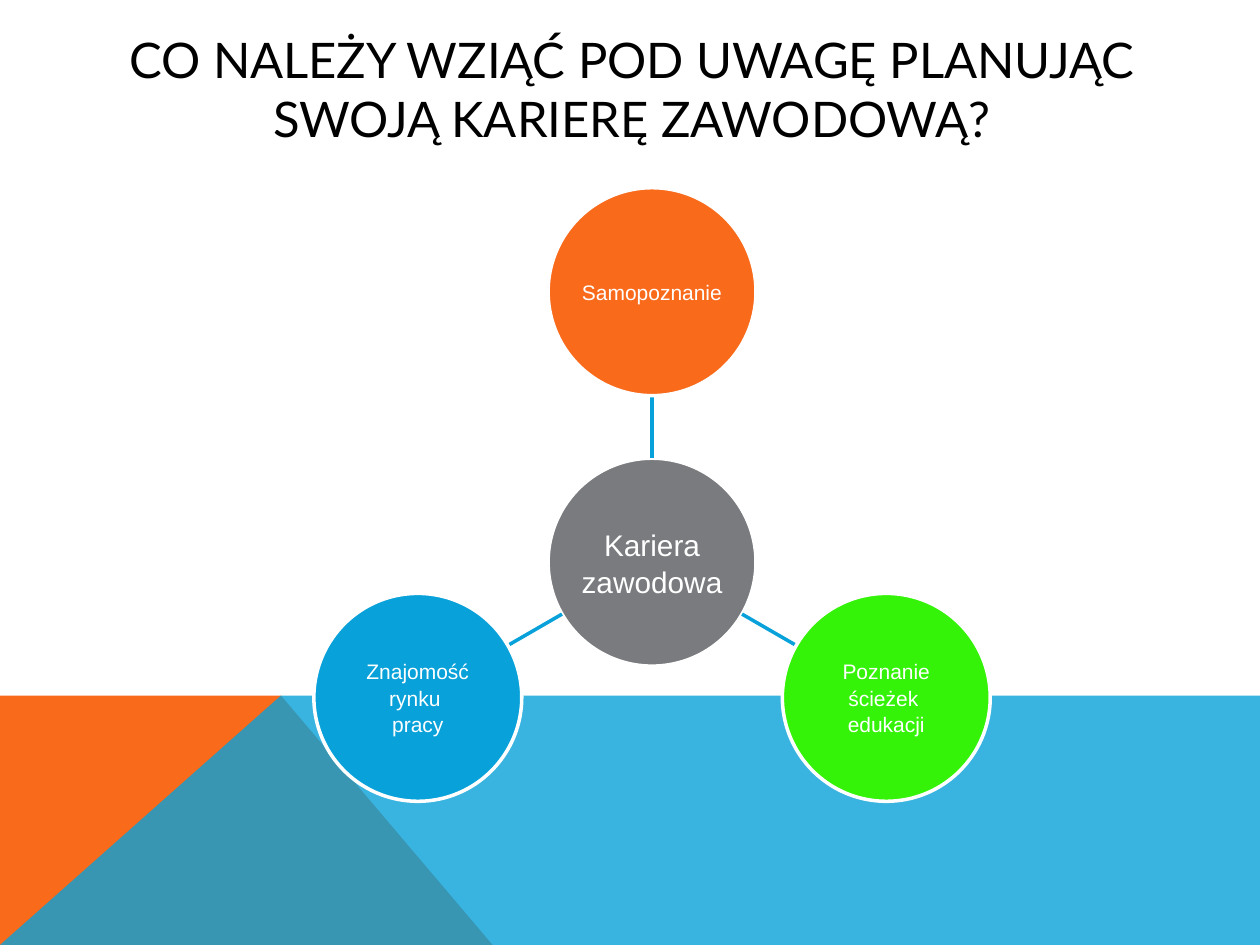
from dataclasses import dataclass
from math import cos, radians, sin

from lxml import etree
from pptx import Presentation
from pptx.dml.color import RGBColor
from pptx.enum.shapes import MSO_CONNECTOR, MSO_SHAPE
from pptx.enum.text import MSO_ANCHOR, MSO_AUTO_SIZE, PP_ALIGN
from pptx.oxml.ns import qn
from pptx.util import Inches, Pt

OVAL = MSO_SHAPE.OVAL
STRAIGHT = MSO_CONNECTOR.STRAIGHT
MIDDLE = MSO_ANCHOR.MIDDLE
CENTER = PP_ALIGN.CENTER
FIXED = MSO_AUTO_SIZE.NONE


@dataclass(frozen=True)
class Theme:
    """Colours, fonts and type sizes of the slide."""
    white: str = "FFFFFF"
    black: str = "000000"
    orange: str = "F96A1B"
    blue: str = "08A1D9"
    green: str = "34F308"
    gray: str = "797B7E"
    head: str = "Lato"
    body: str = "Arial"
    title: int = 28
    hub: int = 17
    node: int = 12
    line: int = 2
    alpha: int = 80


THEME = Theme()
NODES = [
    (270, ["Samopoznanie"], THEME.orange),
    (30, ["Poznanie ścieżek ", "edukacji"], THEME.green),
    (150, ["Znajomość rynku ", "pracy"], THEME.blue),
]


def write(frame, lines, font, size, color):
    """Write centred lines as runs parted by line breaks."""
    frame.word_wrap = True
    frame.auto_size = FIXED
    frame.vertical_anchor = MIDDLE
    para = frame.paragraphs[0]
    para.alignment = CENTER
    for i, line in enumerate(lines):
        if i:
            para.add_line_break()
        run = para.add_run()
        run.text = line
        run.font.name = font
        run.font.size = Pt(size)
        run.font.color.rgb = RGBColor.from_string(color)
    return para


def add_area(slide, points, color, alpha=100):
    """Fill a polygon given by its corners, in inches."""
    start, *rest = [(Inches(x), Inches(y)) for x, y in points]
    form = slide.shapes.build_freeform(*start)
    form.add_line_segments(rest, close=True)
    area = form.convert_to_shape()
    area.shadow.inherit = False
    area.fill.solid()
    area.fill.fore_color.rgb = RGBColor.from_string(color)
    area.line.fill.background()
    if alpha < 100:
        tint = area.fill._xPr.find(".//" + qn("a:srgbClr"))
        etree.SubElement(tint, qn("a:alpha"), val=str(alpha * 1000))


def add_base(slide, left, top, width, height):
    """Draw the two overlapping bands at the foot of the slide."""
    right, foot = left + width, top + height
    peak = (left + 2.23, top)
    add_area(slide, [(left, foot), (left, top), peak, (left + 3.91, foot)],
             THEME.orange)
    add_area(slide, [(left, foot), peak, (right, top), (right, foot)],
             THEME.blue, THEME.alpha)


def add_title(slide, left, top, width, height):
    """Place the title placeholder and fill it."""
    title = slide.shapes.title
    title.left, title.top = Inches(left), Inches(top)
    title.width, title.height = Inches(width), Inches(height)
    write(title.text_frame,
          ["CO NALEŻY WZIĄĆ POD UWAGĘ PLANUJĄC SWOJĄ KARIERĘ ZAWODOWĄ?"],
          THEME.head, THEME.title, THEME.black)


def add_disc(slide, x, y, size, lines, color, type_size):
    """Draw a labelled circle around its centre."""
    disc = slide.shapes.add_shape(
        OVAL, Inches(x - size / 2), Inches(y - size / 2),
        Inches(size), Inches(size))
    disc.shadow.inherit = False
    disc.fill.solid()
    disc.fill.fore_color.rgb = RGBColor.from_string(color)
    disc.line.color.rgb = RGBColor.from_string(THEME.white)
    disc.line.width = Pt(THEME.line)
    frame = disc.text_frame
    frame.margin_left = frame.margin_right = Inches(0.01)
    frame.margin_top = frame.margin_bottom = Inches(0.01)
    para = write(frame, lines, THEME.body, type_size, THEME.white)
    para.line_spacing = 1.05


def add_link(slide, start, end):
    """Draw a straight line between two points."""
    link = slide.shapes.add_connector(
        STRAIGHT, *[Inches(n) for n in (*start, *end)])
    link.line.color.rgb = RGBColor.from_string(THEME.blue)
    link.line.width = Pt(THEME.line)
    etree.SubElement(link._element.spPr, qn("a:effectLst"))


def add_wheel(slide, left, top, width, height):
    """Set the nodes around the hub and link them to it."""
    size = 1.65
    reach = (height - size) / (1 + sin(radians(30)))
    x, y = left + width / 2, top + size / 2 + reach

    def spot(angle, far):
        """Find the point at an angle and distance from the hub."""
        turn = radians(angle)
        return x + far * cos(turn), y + far * sin(turn)

    add_disc(slide, x, y, size, ["Kariera zawodowa"], THEME.gray, THEME.hub)
    for angle, lines, color in NODES:
        add_link(slide, spot(angle, size / 2), spot(angle, reach - size / 2))
        add_disc(slide, *spot(angle, reach), size, lines, color, THEME.node)


def main():
    """Build and save the slide."""
    deck = Presentation()
    deck.slide_width, deck.slide_height = Inches(10), Inches(7.5)
    slide = deck.slides.add_slide(deck.slide_layouts[5])
    add_base(slide, 0, 5.52, 10, 1.98)
    add_title(slide, 0.9, 0.4, 8.23, 0.6)
    add_wheel(slide, 2.49, 1.49, 5.37, 4.87)
    deck.save("out.pptx")


if __name__ == "__main__":
    main()
